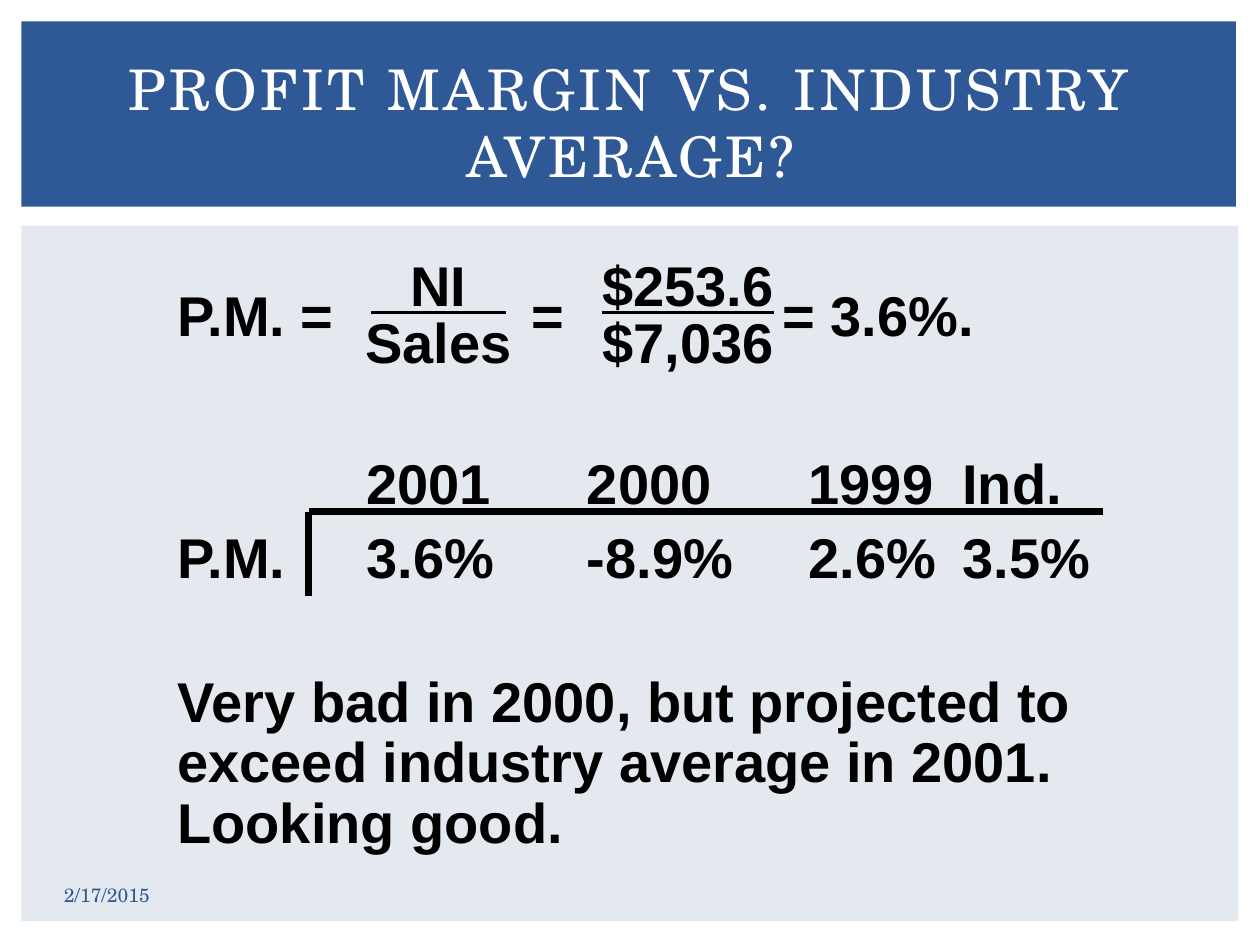
import pptx
import pptx.dml.color
import pptx.enum.shapes
import pptx.enum.text
import pptx.oxml.ns
import pptx.util
from lxml import etree
from pptx.util import Inches

BLUE = pptx.dml.color.RGBColor(0x2F, 0x58, 0x97)
PALE = pptx.dml.color.RGBColor(0xE4, 0xE9, 0xEF)
WHITE = pptx.dml.color.RGBColor(0xFF, 0xFF, 0xFF)
BLACK = pptx.dml.color.RGBColor(0, 0, 0)
HEADING_FONT = "TeX Gyre Schola"
BODY_FONT = "Arial"
ALIGN = pptx.enum.text.PP_ALIGN
ANCHOR = pptx.enum.text.MSO_ANCHOR
qn = pptx.oxml.ns.qn


def add_panel(slide, left, top, width, height, color):
    panel = slide.shapes.add_shape(
        pptx.enum.shapes.MSO_SHAPE.RECTANGLE,
        Inches(left), Inches(top), Inches(width), Inches(height))
    panel.shadow.inherit = False
    panel.fill.solid()
    panel.fill.fore_color.rgb = color
    panel.line.fill.background()


def add_line(slide, start, end, weight):
    line = slide.shapes.add_connector(
        pptx.enum.shapes.MSO_CONNECTOR.STRAIGHT,
        Inches(start[0]), Inches(start[1]), Inches(end[0]), Inches(end[1]))
    line.line.color.rgb = BLACK
    line.line.width = pptx.util.Pt(weight)
    etree.SubElement(line._element.spPr, qn("a:effectLst"))


def format_runs(frame, font, size, color, bold=False):
    for para in frame.paragraphs:
        for span in para.runs:
            span.font.name = font
            span.font.size = pptx.util.Pt(size)
            span.font.color.rgb = color
            span.font.bold = bold


def add_tabs(para, stops):
    tab_list = etree.SubElement(para._p.get_or_add_pPr(), qn("a:tabLst"))
    for stop in stops:
        etree.SubElement(tab_list, qn("a:tab"), pos=str(Inches(stop)), algn="l")


def add_text(slide, left, top, width, height, text, spacing=1.0, tabs=()):
    box = slide.shapes.add_textbox(
        Inches(left), Inches(top), Inches(width), Inches(height))
    frame = box.text_frame
    frame.word_wrap = True
    frame.text = text
    for para in frame.paragraphs:
        if tabs:
            add_tabs(para, tabs)
        para.line_spacing = spacing
    format_runs(frame, BODY_FONT, 32, BLACK, bold=True)
    return frame


def add_fraction(slide, center, width, bar_width, top_text, bottom_text):
    frame = add_text(slide, center - width / 2, 1.94, width, 1.1,
                     f"{top_text}\n{bottom_text}")
    for para in frame.paragraphs:
        para.alignment = ALIGN.CENTER
    frame.paragraphs[1].line_spacing = 0.85
    add_line(slide, (center - bar_width / 2, 2.48),
             (center + bar_width / 2, 2.48), 1.75)


def set_title(slide, text):
    title = slide.shapes.title
    title.left, title.top = Inches(0.42), Inches(0.39)
    title.width, title.height = Inches(9.17), Inches(1.15)
    frame = title.text_frame
    frame.text = text
    frame.word_wrap = True
    frame.auto_size = pptx.enum.text.MSO_AUTO_SIZE.NONE
    frame.vertical_anchor = ANCHOR.MIDDLE
    frame.paragraphs[0].alignment = ALIGN.CENTER
    format_runs(frame, HEADING_FONT, 32, WHITE)
    frame.paragraphs[0].runs[0].font._element.set("spc", "200")


def add_date(slide, text):
    frame = add_text(slide, 0.41, 6.95, 2.33, 0.3, text)
    frame.vertical_anchor = ANCHOR.MIDDLE
    format_runs(frame, HEADING_FONT, 11, BLUE)


def main():
    deck = pptx.Presentation()
    deck.slide_width, deck.slide_height = Inches(10), Inches(7.5)
    slide = deck.slides.add_slide(deck.slide_layouts[5])

    # Background panels, moved behind the title placeholder
    add_panel(slide, 0.17, 1.79, 9.66, 5.52, PALE)
    add_panel(slide, 0.17, 0.17, 9.64, 1.47, BLUE)
    title_element = slide.shapes.title._element
    title_element.getparent().append(title_element)
    set_title(slide, "PROFIT MARGIN VS. INDUSTRY AVERAGE?")

    # Profit margin formula
    add_text(slide, 1.31, 2.18, 6.61, 0.63, "P.M. =\t=\t= 3.6%.",
             tabs=(2.81, 4.8))
    add_fraction(slide, 3.48, 1.39, 1.07, "NI", "Sales")
    add_fraction(slide, 5.46, 1.57, 1.36, "$253.6", "$7,036")

    # Comparison by year, with its rules
    add_text(slide, 1.31, 3.46, 7.63, 1.27,
             "\t2001\t2000\t1999\tInd.\nP.M.\t3.6%\t-8.9%\t2.6%\t3.5%",
             spacing=1.1, tabs=(1.5, 3.25, 5.01, 6.23))
    corner = (2.45, 4.06)
    add_line(slide, corner, (8.75, 4.06), 4)
    add_line(slide, corner, (2.45, 4.73), 4)

    # Conclusion and date
    add_text(slide, 1.31, 5.3, 8.33, 1.54,
             "Very bad in 2000, but projected to\n"
             "exceed industry average in 2001. Looking good.", spacing=0.9)
    add_date(slide, "2/17/2015")

    deck.save("out.pptx")


if __name__ == "__main__":
    main()
